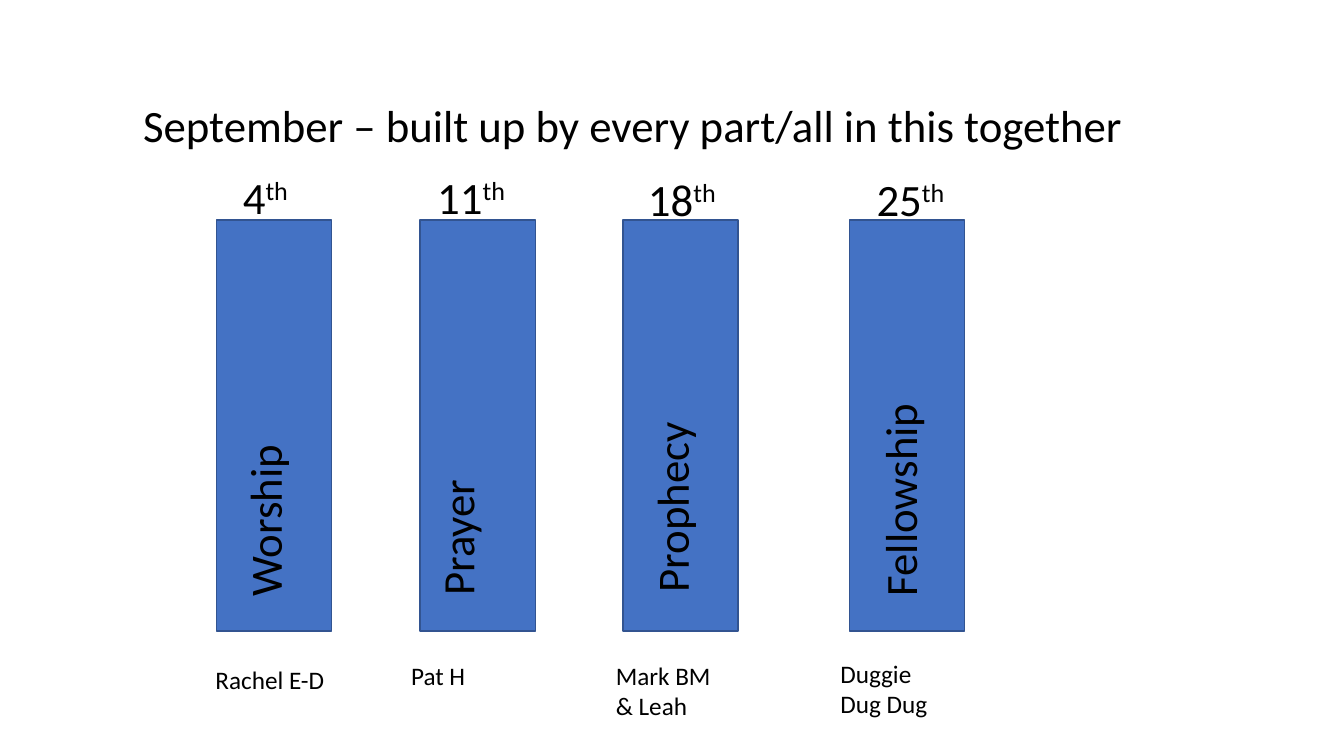
from pptx import Presentation
from pptx.dml.color import RGBColor
from pptx.enum.shapes import MSO_SHAPE as Shape
from pptx.enum.text import MSO_ANCHOR as Anchor, MSO_AUTO_SIZE as AutoSize, PP_ALIGN as Align
from pptx.util import Cm, Pt

BLACK = RGBColor(0x00, 0x00, 0x00)
BLUE = RGBColor(0x44, 0x72, 0xC4)
DARK_BLUE = RGBColor(0x32, 0x54, 0x91)

BAR_TOP, BAR_WIDTH, BAR_HEIGHT = Cm(5.54), Cm(2.9), Cm(10.36)
DATE_HEIGHT = Cm(2.39)
THEME_WIDTH, THEME_HEIGHT = Cm(8.51), Cm(1.63)
LEADER_WIDTH = Cm(3.35)
FRAME_FORMAT = {
    "word_wrap": True,
    "vertical_anchor": Anchor.TOP,
    "auto_size": AutoSize.SHAPE_TO_FIT_TEXT,
}


def write(box, text, size, superscript=""):
    """Fill a box with left-aligned black text and an optional raised ending."""
    frame = box.text_frame
    for name, value in FRAME_FORMAT.items():
        setattr(frame, name, value)
    paragraph = frame.paragraphs[0]
    paragraph.alignment = Align.LEFT
    for part in filter(None, (text, superscript)):
        run = paragraph.add_run()
        run.text = part
        for name, value in {"name": "Calibri", "size": Pt(size)}.items():
            setattr(run.font, name, value)
        run.font.color.rgb = BLACK
    if superscript:
        run._r.get_or_add_rPr().set("baseline", "30000")


deck = Presentation()
deck.slide_width, deck.slide_height = Cm(33.87), Cm(19.05)
slide = deck.slides.add_slide(deck.slide_layouts[5])
shapes = slide.shapes

heading = shapes.title
heading_place = {"left": Cm(3.35), "top": Cm(2.34), "width": Cm(25.48), "height": Cm(1.63)}
for name, value in heading_place.items():
    setattr(heading, name, value)
write(heading, "September – built up by every part/all in this together", 32)
heading.text_frame.word_wrap = False

# Bar left, then day (left, top, width), theme (left, top), leader (left, top, height), in cm
weeks = [
    (5.46, "4", (5.87, 4.14, 1.98), "Worship", (2.41, 10.21), "Rachel E-D", (5.18, 16.61, 1.02)),
    (10.59, "11", (10.77, 4.14, 2.72), "Prayer", (7.26, 10.19), "Pat H", (10.11, 16.51, 1.02)),
    (15.7, "18", (16.08, 4.19, 2.51), "Prophecy", (12.67, 10.11), "Mark BM & Leah", (15.27, 16.51, 1.8)),
    (21.41, "25", (21.84, 4.19, 2.44), "Fellowship", (18.42, 10.21), "Duggie Dug Dug", (20.93, 16.46, 1.8)),
]

for bar_left, day, day_place, theme, theme_place, leader, leader_place in weeks:
    bar = shapes.add_shape(Shape.RECTANGLE, Cm(bar_left), BAR_TOP, BAR_WIDTH, BAR_HEIGHT)
    bar.shadow.inherit = False
    bar.fill.solid()
    bar.fill.fore_color.rgb = BLUE
    bar.line.color.rgb = DARK_BLUE
    bar.line.width = Pt(1)

    date_box = shapes.add_textbox(*map(Cm, day_place), DATE_HEIGHT)
    write(date_box, day, 32, "th")

    theme_box = shapes.add_textbox(*map(Cm, theme_place), THEME_WIDTH, THEME_HEIGHT)
    theme_box.rotation = 270
    write(theme_box, theme, 32)

    left, top, height = map(Cm, leader_place)
    write(shapes.add_textbox(left, top, LEADER_WIDTH, height), leader, 18)

deck.save("out.pptx")
